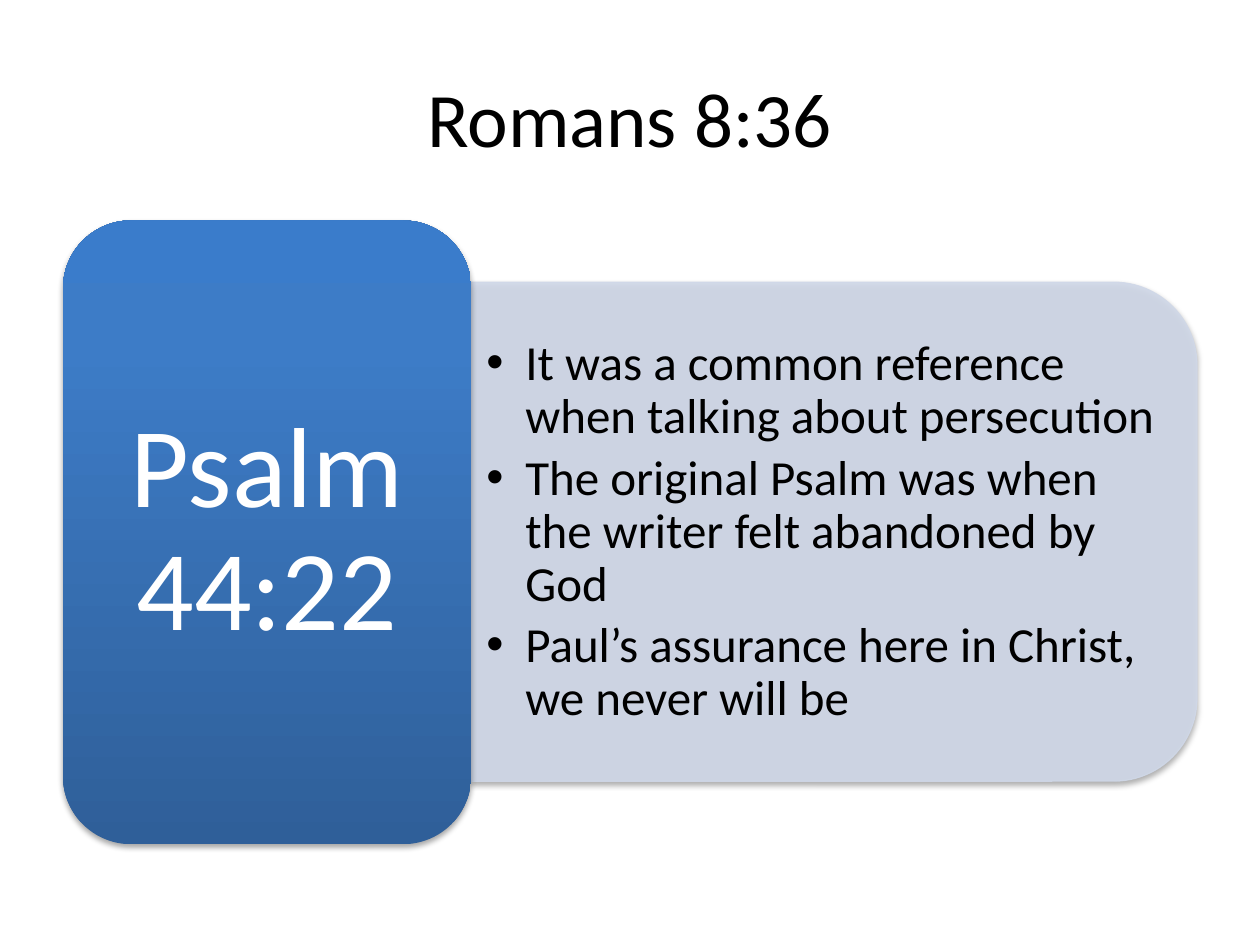
from lxml.etree import SubElement
from pptx import Presentation
from pptx.dml.color import RGBColor
from pptx.enum.shapes import MSO_SHAPE as Preset
from pptx.enum.text import MSO_ANCHOR as Anchor, PP_ALIGN as Align
from pptx.oxml.ns import qn
from pptx.util import Inches, Pt

BLACK = RGBColor(0x00, 0x00, 0x00)
WHITE = RGBColor(0xFF, 0xFF, 0xFF)
PALE = RGBColor(0xD0, 0xD8, 0xE8)
STOPS = [
    (0, RGBColor(0x2F, 0x5F, 0x99)),
    (80, RGBColor(0x3D, 0x7C, 0xC7)),
    (100, RGBColor(0x3A, 0x7C, 0xCB)),
]
POINTS = [
    "It was a common reference when talking about persecution",
    "The original Psalm was when the writer felt abandoned by God",
    "Paul’s assurance here in Christ, we never will be",
]

deck = Presentation()
deck.slide_width, deck.slide_height = Inches(10), Inches(7.5)
page = deck.slides.add_slide(deck.slide_layouts[6])


def add_text(area, lines, size, color, align, insets, spacing=1, after=0):
    box = page.shapes.add_textbox(*map(Inches, area))
    frame = box.text_frame
    frame.word_wrap = True
    frame.vertical_anchor = Anchor.MIDDLE
    frame.margin_left = frame.margin_right = Inches(insets[0])
    frame.margin_top = frame.margin_bottom = Inches(insets[1])
    for index, line in enumerate(lines):
        para = frame.add_paragraph() if index else frame.paragraphs[0]
        para.alignment = align
        para.line_spacing = spacing
        para.space_after = Pt(after)
        span = para.add_run()
        span.text = line
        span.font.name = "Calibri"
        span.font.size = Pt(size)
        span.font.color.rgb = color
    return frame


def add_panel(preset, area):
    panel = page.shapes.add_shape(preset, *map(Inches, area))
    panel.shadow.inherit = False
    effects = panel.element.spPr.find(qn("a:effectLst"))
    shadow = SubElement(effects, qn("a:outerShdw"), blurRad=str(Pt(3.1)),
                        dist=str(Pt(1.8)), dir="5400000", rotWithShape="0")
    tint = SubElement(shadow, qn("a:srgbClr"), val=str(BLACK))
    SubElement(tint, qn("a:alpha"), val="35000")
    return panel


add_text((0.5, 0.3, 9, 1.25), ["Romans 8:36"], 44, BLACK, Align.CENTER, (0.1, 0.05))

detail = add_panel(Preset.ROUND_2_SAME_RECTANGLE, (4.64, 1.34, 3.96, 5.76))
detail.rotation = 90
detail.fill.solid()
detail.fill.fore_color.rgb = PALE
detail.line.color.rgb = PALE
detail.line.width = Pt(0.75)
for color in detail.element.spPr.findall(".//" + qn("a:solidFill") + "/" + qn("a:srgbClr")):
    SubElement(color, qn("a:alpha"), val="90000")

points = add_text((3.74, 2.44, 5.57, 3.57), POINTS, 28, BLACK, Align.LEFT,
                  (0.12, 0.06), 0.9, 5)
for para in points.paragraphs:
    settings = para._p.get_or_add_pPr()
    settings.set("marL", str(Inches(0.31)))
    settings.set("indent", str(Inches(-0.31)))
    SubElement(settings, qn("a:buFont"), typeface="Arial")
    SubElement(settings, qn("a:buChar"), char="•")

verse = add_panel(Preset.ROUNDED_RECTANGLE, (0.5, 1.75, 3.24, 4.95))
verse.line.fill.background()
verse.fill.gradient()
gradient = verse.element.spPr.find(qn("a:gradFill"))
stop_list = gradient.find(qn("a:gsLst"))
for stop in list(stop_list):
    stop_list.remove(stop)
for position, color in STOPS:
    stop = SubElement(stop_list, qn("a:gs"), pos=str(position * 1000))
    SubElement(stop, qn("a:srgbClr"), val=str(color))
gradient.find(qn("a:lin")).set("ang", "16200000")

add_text((0.66, 1.91, 2.92, 4.63), ["Psalm 44:22"], 65, WHITE, Align.CENTER,
         (0.27, 0.14), 0.9)

deck.save("out.pptx")
